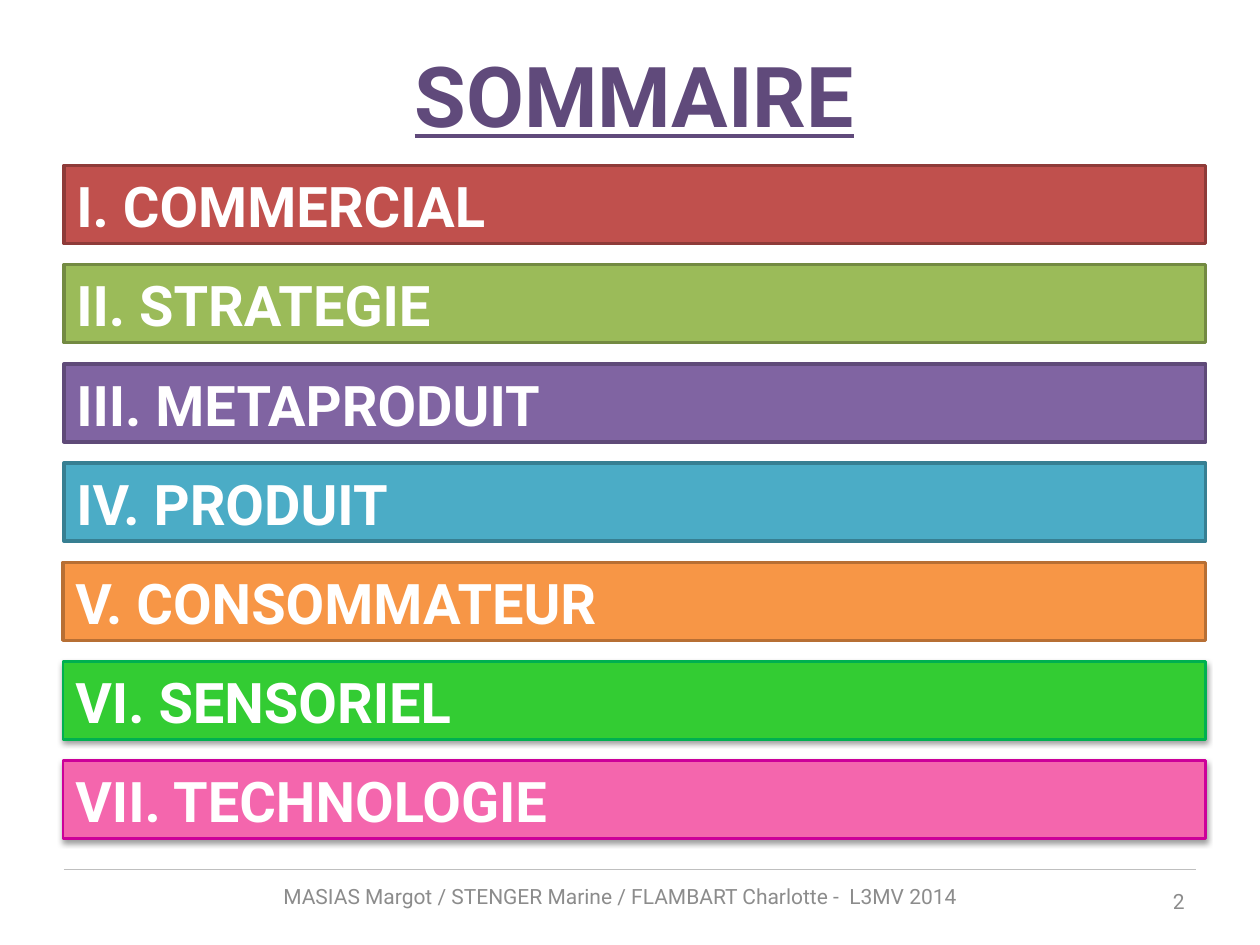
from dataclasses import dataclass

from lxml import etree
from pptx import Presentation
from pptx.dml.color import RGBColor
from pptx.enum.shapes import MSO_CONNECTOR, MSO_SHAPE
from pptx.enum.text import MSO_ANCHOR, PP_ALIGN
from pptx.oxml.ns import qn
from pptx.slide import Slide
from pptx.util import Pt

RECTANGLE = MSO_SHAPE.RECTANGLE
STRAIGHT = MSO_CONNECTOR.STRAIGHT
TOP, MIDDLE = MSO_ANCHOR.TOP, MSO_ANCHOR.MIDDLE
LEFT, CENTER, RIGHT = PP_ALIGN.LEFT, PP_ALIGN.CENTER, PP_ALIGN.RIGHT

COLORS = {
    "title": "604A7B", "footer": "8C8C8C", "rule": "BFBFBF",
    "white": "FFFFFF", "shadow": "000000",
    "red": "C0504D", "red_edge": "8E3B39",
    "olive": "9BBB59", "olive_edge": "738A42",
    "purple": "8064A2", "purple_edge": "5F4A78",
    "teal": "4BACC6", "teal_edge": "377F92",
    "orange": "F79646", "orange_edge": "B76F34",
    "green": "33CC33", "green_edge": "00B050",
    "pink": "F466AD", "pink_edge": "CC0099",
}

SECTIONS = [
    ("I. COMMERCIAL", "red", 36.5, False),
    ("II. STRATEGIE", "olive", 36.5, False),
    ("III. METAPRODUIT", "purple", 36.5, False),
    ("IV. PRODUIT", "teal", 36.5, False),
    ("V. CONSOMMATEUR", "orange", 36, False),
    ("VI. SENSORIEL", "green", 36, True),
    ("VII. TECHNOLOGIE", "pink", 36, True),
]
BAR_TOP, BAR_STEP, BAR_HEIGHT, BAR_RIGHT = 94.5, 56.7, 44.6, 689


def color(name):
    return RGBColor.from_string(COLORS[name])


@dataclass
class SlideBuilder:
    """Draws styled elements on the current slide, in points."""

    slide: Slide
    font: str = "Roboto"

    def label(self, shape, text, size, ink, align, anchor, bold=False, underline=None):
        frame = shape.text_frame
        frame.word_wrap = True
        frame.vertical_anchor = anchor
        para = frame.paragraphs[0]
        para.text = text
        para.alignment = align
        font = para.font
        font.name, font.size = self.font, Pt(size)
        font.bold, font.underline = bold, underline
        font.color.rgb = color(ink)

    def text(self, bounds, text, size, ink, align, anchor=MIDDLE, **style):
        box = self.slide.shapes.add_textbox(*map(Pt, bounds))
        self.label(box, text, size, ink, align, anchor, **style)

    def rule(self, left, right, top):
        line = self.slide.shapes.add_connector(
            STRAIGHT, Pt(left), Pt(top), Pt(right), Pt(top))
        line.line.color.rgb = color("rule")
        line.line.width = Pt(0.75)
        etree.SubElement(line._element.spPr, qn("a:effectLst"))

    def bar(self, bounds, text, fill, raised):
        bar = self.slide.shapes.add_shape(RECTANGLE, *map(Pt, bounds))
        bar.fill.solid()
        bar.fill.fore_color.rgb = color(fill)
        bar.line.color.rgb = color(f"{fill}_edge")
        bar.line.width = Pt(1.5 if raised else 2)
        bar.shadow.inherit = False
        if raised:
            self.raise_bar(bar)
        self.label(bar, text, 32, "white", LEFT, TOP, bold=True)

    def raise_bar(self, bar):
        effects = bar._element.spPr.find(qn("a:effectLst"))
        shadow = etree.SubElement(
            effects, qn("a:outerShdw"), blurRad=str(Pt(3.1)), dist=str(Pt(1.6)),
            dir="5400000", rotWithShape="0")
        tint = etree.SubElement(shadow, qn("a:srgbClr"), val=COLORS["shadow"])
        etree.SubElement(tint, qn("a:alpha"), val="38000")


def main():
    deck = Presentation()
    deck.slide_width, deck.slide_height = Pt(720), Pt(540)
    page = SlideBuilder(deck.slides.add_slide(deck.slide_layouts[6]))

    page.rule(36.5, 683.5, 496.8)
    page.text((36, 21.6, 653, 49.7), "SOMMAIRE", 48, "title", CENTER, TOP,
              bold=True, underline=True)
    page.text((110.9, 502.6, 487.4, 18.7),
              "MASIAS Margot / STENGER Marine / FLAMBART Charlotte -  L3MV 2014",
              12, "footer", CENTER)
    page.text((516.2, 500.4, 167.8, 28.8), "2", 12, "footer", RIGHT)

    for index, (heading, fill, left, raised) in enumerate(SECTIONS):
        top = BAR_TOP + index * BAR_STEP
        page.bar((left, top, BAR_RIGHT - left, BAR_HEIGHT), heading, fill, raised)

    deck.save("out.pptx")


if __name__ == "__main__":
    main()
